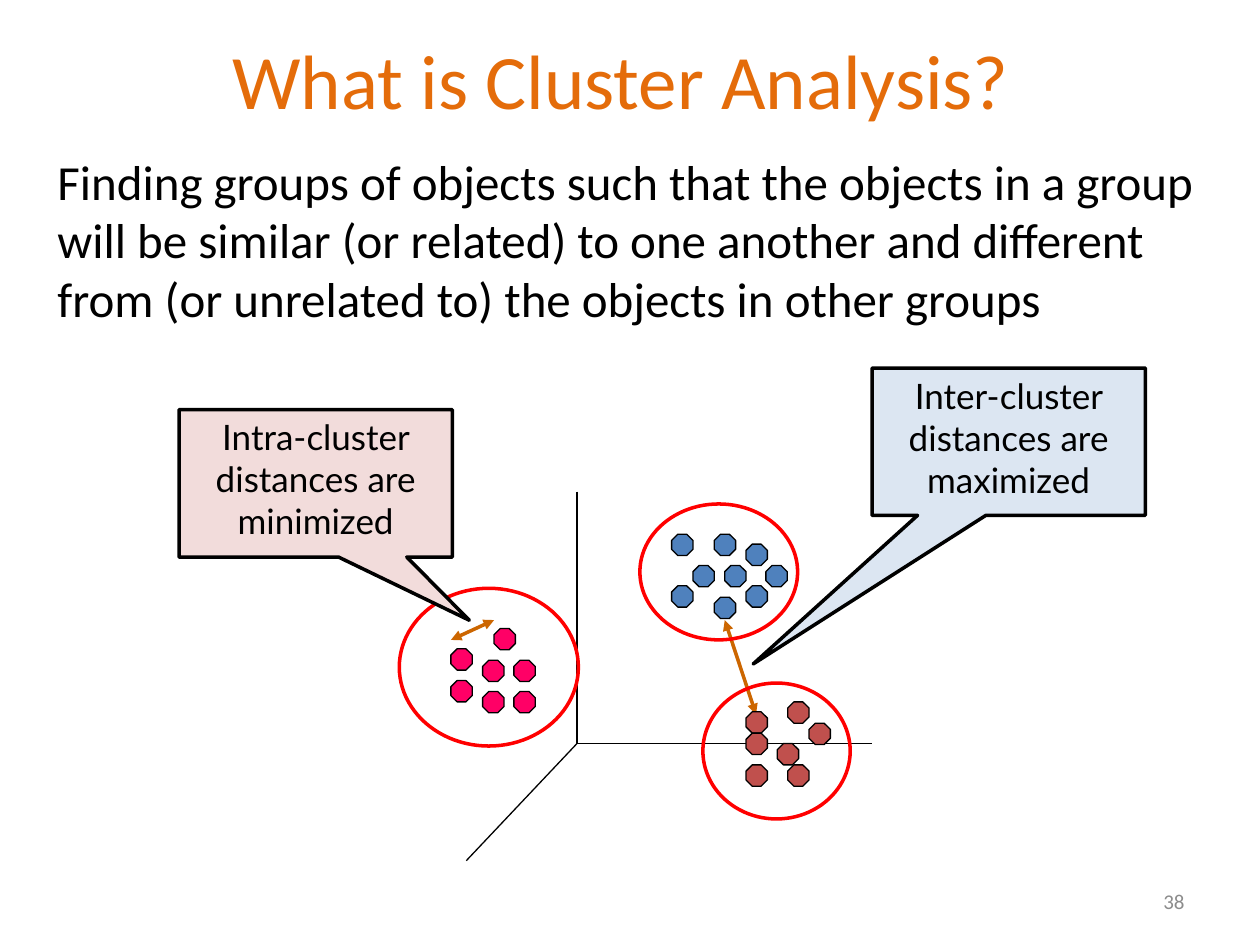
from pptx import Presentation
from pptx.dml.color import RGBColor
from pptx.enum.shapes import MSO_CONNECTOR as Link, MSO_SHAPE as Shape
from pptx.enum.text import MSO_ANCHOR as Anchor, PP_ALIGN as Align
from pptx.oxml.ns import qn
from pptx.util import Cm, Pt
from lxml.etree import SubElement


def color(value):
    return RGBColor.from_string(value)


deck = Presentation()
deck.slide_width, deck.slide_height = Cm(25.4), Cm(19.05)
page = deck.slides.add_slide(deck.slide_layouts[6])

texts = [
    ("What is Cluster Analysis?", (1.09, 0, 22.86, 3.18), 44, "E46C0A", Align.CENTER, Anchor.MIDDLE),
    ("Finding groups of objects such that the objects in a group will be similar "
     "(or related) to one another and different from (or unrelated to) the objects "
     "in other groups", (0.91, 2.92, 24, 3.61), 28, "000000", Align.LEFT, Anchor.TOP),
    ("38", (18.21, 17.65, 5.92, 1.02), 12, "8C8C8C", Align.RIGHT, Anchor.MIDDLE),
]
for wording, place, size, ink, align, anchor in texts:
    box = page.shapes.add_textbox(*map(Cm, place))
    box.text_frame.word_wrap = True
    box.text_frame.vertical_anchor = anchor
    box.text_frame.text = wording
    para = box.text_frame.paragraphs[0]
    para.alignment = align
    span = para.runs[0]
    span.font.name = "Calibri"
    span.font.size = Pt(size)
    span.font.color.rgb = color(ink)

axes = [(11.63, 9.91, 11.63, 14.99), (11.63, 14.99, 17.58, 14.99), (11.63, 14.99, 9.4, 17.35)]
arrows = [(15.24, 14.4, 14.61, 12.5), (9.09, 12.9, 9.96, 12.5)]
lines = [(ends, "000000", 0.75, False) for ends in axes]
lines += [(ends, "CC6600", 2, True) for ends in arrows]
for ends, ink, weight, pointed in lines:
    line = page.shapes.add_connector(Link.STRAIGHT, *map(Cm, ends))
    line.line.color.rgb = color(ink)
    line.line.width = Pt(weight)
    if pointed:
        outline = line.line._get_or_add_ln()
        for tip in ("a:headEnd", "a:tailEnd"):
            SubElement(outline, qn(tip), type="triangle")
    SubElement(line._element.spPr, qn("a:effectLst"))

clusters = [
    ("4F81BD", (12.9, 10.16, 3.18, 2.74),
     [(13.97, 11.4), (14.61, 11.4), (14.4, 10.77), (14.4, 12.04), (15.44, 11.4),
      (15.04, 10.97), (13.54, 10.77), (15.04, 11.81), (13.54, 11.81)]),
    ("FF0066", (8.05, 11.86, 3.61, 3.18),
     [(9.09, 13.08), (9.73, 13.31), (9.73, 13.94), (10.36, 13.31), (9.96, 12.67),
      (10.36, 13.94), (9.09, 13.72)]),
    ("C0504D", (14.17, 13.77, 2.97, 2.74),
     [(15.04, 14.35), (16.31, 14.58), (15.67, 14.99), (15.04, 15.42), (15.88, 15.42),
      (15.04, 14.78), (15.88, 14.15)]),
]
for fill, ring_place, dots in clusters:
    for left, top in dots:
        dot = page.shapes.add_shape(Shape.OCTAGON, Cm(left), Cm(top), Cm(0.43), Cm(0.43))
        dot.shadow.inherit = False
        dot.fill.solid()
        dot.fill.fore_color.rgb = color(fill)
        dot.line.color.rgb = color("000000")
        dot.line.width = Pt(0.75)
    ring = page.shapes.add_shape(Shape.OVAL, *map(Cm, ring_place))
    ring.shadow.inherit = False
    ring.fill.background()
    ring.line.color.rgb = color("FF0000")
    ring.line.width = Pt(2)

callouts = [
    ("Inter-cluster distances are maximized", 17.58, 7.42, "DCE6F2", (-0.935, 1.509)),
    ("Intra-cluster distances are minimized", 3.61, 8.26, "F2DCDB", (0.562, 0.929)),
]
for wording, left, top, fill, tip in callouts:
    callout = page.shapes.add_shape(Shape.RECTANGULAR_CALLOUT, Cm(left), Cm(top), Cm(5.51), Cm(2.97))
    callout.adjustments[0], callout.adjustments[1] = tip
    callout.shadow.inherit = False
    callout.fill.solid()
    callout.fill.fore_color.rgb = color(fill)
    callout.line.color.rgb = color("000000")
    callout.line.width = Pt(2)
    callout.text_frame.word_wrap = True
    callout.text_frame.vertical_anchor = Anchor.TOP
    callout.text_frame.text = wording
    para = callout.text_frame.paragraphs[0]
    para.alignment = Align.CENTER
    span = para.runs[0]
    span.font.name = "Lato"
    span.font.size = Pt(20)
    span.font.color.rgb = color("000000")

deck.save("out.pptx")
